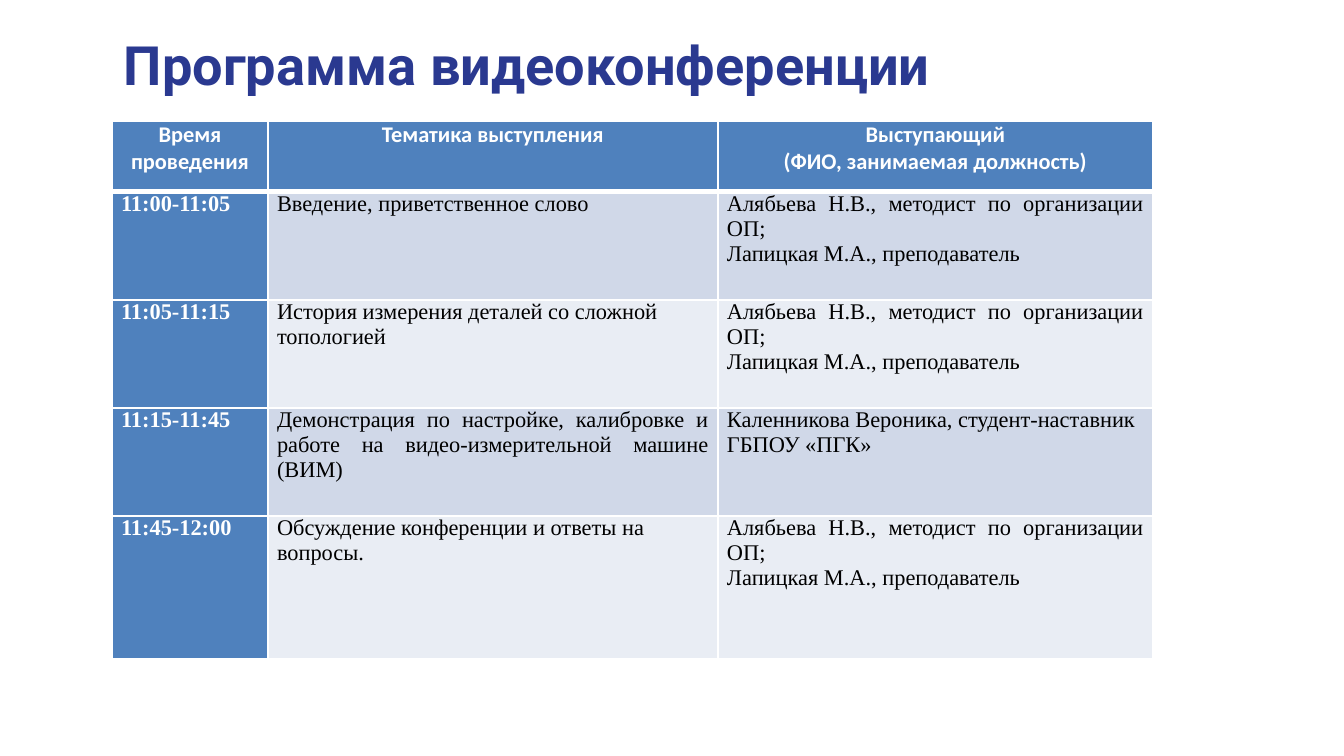
"""Build the video conference programme slide: a title above a schedule table."""
from lxml import etree
from pptx import Presentation
from pptx import util as u
from pptx.dml.color import RGBColor
from pptx.enum import text
from pptx.oxml import ns

COLORS = {
    "title": "2A3990", "header": "4F81BD", "odd": "D0D8E8", "even": "E9EDF4",
    "white": "FFFFFF", "black": "000000",
}
LEFT, JUSTIFY, CENTER = text.PP_ALIGN.LEFT, text.PP_ALIGN.JUSTIFY, text.PP_ALIGN.CENTER

TITLE = "Программа видеоконференции"
HEADERS = [
    ["Время проведения"],
    ["Тематика выступления"],
    ["Выступающий", "(ФИО, занимаемая должность)"],
]
HOSTS = ["Алябьева Н.В., методист по организации ОП;", "Лапицкая М.А., преподаватель"]
STUDENT = ["Каленникова Вероника, студент-наставник ГБПОУ «ПГК»"]
SESSIONS = [
    ("11:00-11:05", "Введение, приветственное слово", LEFT, HOSTS, JUSTIFY),
    ("11:05-11:15", "История измерения деталей со сложной топологией", LEFT, HOSTS, JUSTIFY),
    ("11:15-11:45", "Демонстрация по настройке, калибровке и работе на "
     "видео-измерительной машине (ВИМ)", JUSTIFY, STUDENT, LEFT),
    ("11:45-12:00", "Обсуждение конференции и ответы на вопросы.", LEFT, HOSTS, JUSTIFY),
]
COLUMN_WIDTHS = [156, 450, 435]
ROW_HEIGHTS = [71, 108, 108, 108, 143]


def px(count):
    return u.Emu(round(count * 914400 / 134.4))


def write(frame, lines, font="Times New Roman", size=12, color="black", bold=False, align=LEFT):
    for index, line in enumerate(lines):
        para = frame.add_paragraph() if index else frame.paragraphs[0]
        para.alignment = align
        span = para.add_run()
        span.text = line
        span.font.name = font
        span.font.size = u.Pt(size)
        span.font.bold = bold
        span.font.color.rgb = RGBColor.from_string(COLORS[color])


def add_border(cell, side, width):
    properties = cell._tc.get_or_add_tcPr()
    line = etree.SubElement(properties, ns.qn(f"a:ln{side}"), w=str(u.Pt(width)))
    fill = etree.SubElement(line, ns.qn("a:solidFill"))
    etree.SubElement(fill, ns.qn("a:srgbClr"), val=COLORS["white"])


def fill_cell(cell, lines, fill, borders, **style):
    cell.margin_left = cell.margin_right = px(9)
    cell.margin_top = cell.margin_bottom = 0
    for side, width in borders.items():
        add_border(cell, side, width)
    cell.fill.solid()
    cell.fill.fore_color.rgb = RGBColor.from_string(COLORS[fill])
    write(cell.text_frame, lines, **style)


def add_schedule(page):
    table = page.shapes.add_table(
        len(ROW_HEIGHTS), len(COLUMN_WIDTHS), px(112), px(121),
        px(sum(COLUMN_WIDTHS)), px(sum(ROW_HEIGHTS))).table
    for column, width in zip(table.columns, COLUMN_WIDTHS):
        column.width = px(width)
    for row, height in zip(table.rows, ROW_HEIGHTS):
        row.height = px(height)

    header_borders = {"L": 1, "R": 1, "T": 1, "B": 3}
    for column, lines in enumerate(HEADERS):
        fill_cell(table.cell(0, column), lines, "header", header_borders,
                  font="Calibri", color="white", bold=True, align=CENTER)

    for row, (time, topic, topic_align, speakers, speaker_align) in enumerate(SESSIONS, 1):
        band = "odd" if row % 2 else "even"
        borders = {"L": 1, "R": 1, "T": 3 if row == 1 else 1, "B": 1}
        fill_cell(table.cell(row, 0), [time], "header", borders, color="white", bold=True)
        fill_cell(table.cell(row, 1), [topic], band, borders, align=topic_align)
        fill_cell(table.cell(row, 2), speakers, band, borders, align=speaker_align)


def main():
    deck = Presentation()
    deck.slide_width, deck.slide_height = px(1344), px(756)
    page = deck.slides.add_slide(deck.slide_layouts[6])

    frame = page.shapes.add_textbox(px(124), px(31), px(1040), px(66)).text_frame
    frame.word_wrap = True
    frame.margin_left = frame.margin_right = frame.margin_top = frame.margin_bottom = 0
    write(frame, [TITLE], font="Roboto", size=29, color="title", bold=True)

    add_schedule(page)
    deck.save("out.pptx")


if __name__ == "__main__":
    main()
